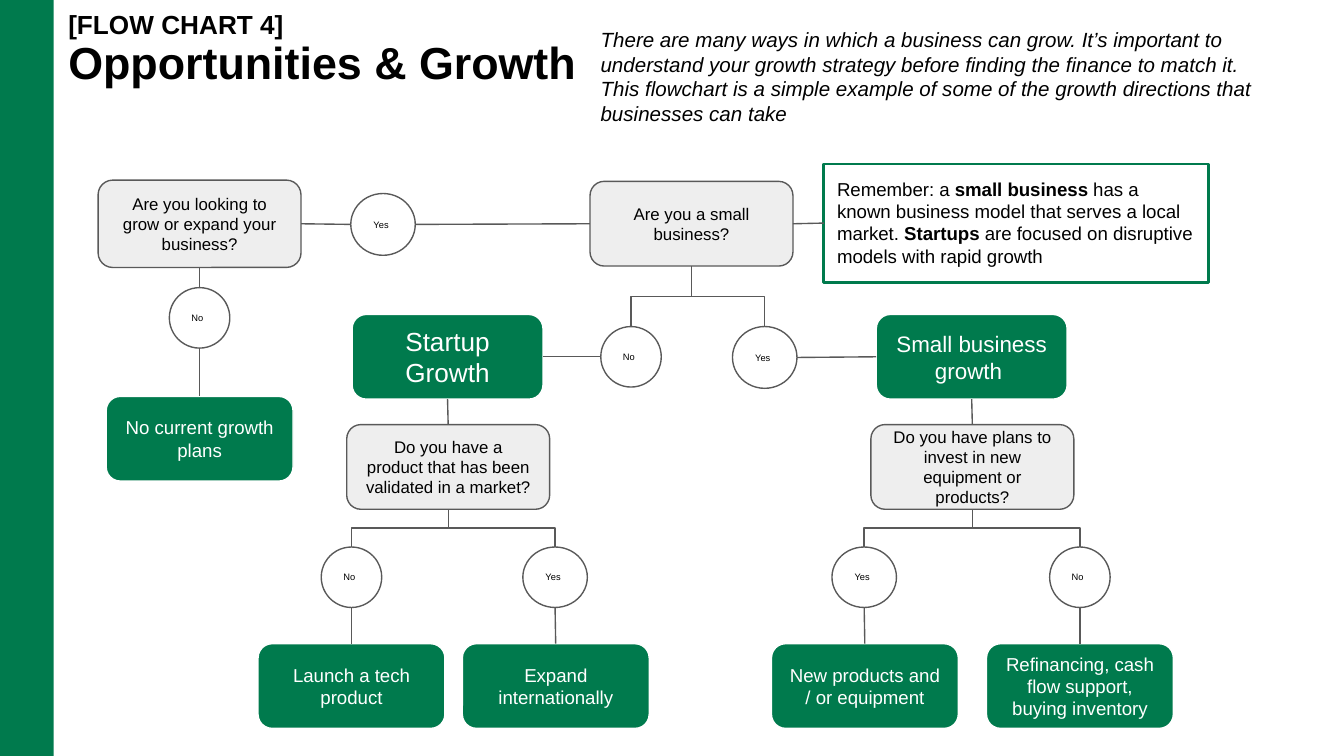
from pptx import Presentation
from pptx.dml.color import RGBColor
from pptx.enum.shapes import MSO_CONNECTOR as Connector, MSO_SHAPE as Shape
from pptx.enum.text import MSO_ANCHOR as Anchor, MSO_AUTO_SIZE as AutoSize, PP_ALIGN as Align
from pptx.oxml.xmlchemy import OxmlElement
from pptx.util import Inches, Pt

GREEN = RGBColor(0x00, 0x7A, 0x4D)
LIGHT_GREY = RGBColor(0xEE, 0xEE, 0xEE)
DARK_GREY = RGBColor(0x59, 0x59, 0x59)
WHITE = RGBColor(0xFF, 0xFF, 0xFF)
BLACK = RGBColor(0x00, 0x00, 0x00)

SLIDE_WIDTH = Inches(10)
SLIDE_HEIGHT = SLIDE_WIDTH * 9 // 16
TOP, LEFT, BOTTOM, RIGHT = range(4)
BOX_HEIGHT = 0.63
ANSWER_TOP = 4.07
OUTCOME_TOP = 4.79


def set_margins(frame):
    """Wrap the text and give it equal margins."""
    frame.word_wrap = True
    frame.margin_left = frame.margin_right = Inches(0.1)
    frame.margin_top = frame.margin_bottom = Inches(0.1)


def style_run(run, size, color=BLACK, bold=False, italic=False):
    """Apply the slide's font to a run."""
    run.font.name = "Arial"
    run.font.size = Pt(size)
    run.font.color.rgb = color
    run.font.bold = bold
    run.font.italic = italic


def add_node(slide, kind, text, box, fill, line, size, color, align=Align.CENTER):
    """Add one labelled node of the flow chart."""
    node = slide.shapes.add_shape(kind, *map(Inches, box))
    node.shadow.inherit = False
    node.fill.solid()
    node.fill.fore_color.rgb = fill
    node.line.color.rgb = line
    node.line.width = Pt(0.75)
    set_margins(node.text_frame)
    node.text_frame.vertical_anchor = Anchor.MIDDLE
    node.text_frame.text = text
    label = node.text_frame.paragraphs[0]
    label.alignment = align
    style_run(label.runs[0], size, color)
    return node


def add_question(slide, text, left, top, height=BOX_HEIGHT):
    """Add a grey question box."""
    return add_node(slide, Shape.ROUNDED_RECTANGLE, text, (left, top, 1.51, height),
                    LIGHT_GREY, DARK_GREY, 9, BLACK)


def add_outcome(slide, text, left, top, width=1.39, size=10):
    """Add a green outcome box."""
    return add_node(slide, Shape.ROUNDED_RECTANGLE, text, (left, top, width, BOX_HEIGHT),
                    GREEN, WHITE, size, WHITE)


def add_answer(slide, text, left, top, height=0.45):
    """Add a Yes or No circle."""
    width = 0.48 if text == "Yes" else 0.45
    return add_node(slide, Shape.OVAL, text, (left, top, width, height),
                    WHITE, DARK_GREY, 5, BLACK, Align.LEFT)


def side_middle(node, side):
    """Return the middle point of a node's side."""
    center, middle = node.left + node.width // 2, node.top + node.height // 2
    return {
        TOP: (center, node.top),
        LEFT: (node.left, middle),
        BOTTOM: (center, node.top + node.height),
        RIGHT: (node.left + node.width, middle),
    }[side]


def add_link(slide, kind, start, end):
    """Add a grey connector between two points."""
    link = slide.shapes.add_connector(kind, *start, *end)
    link.line.color.rgb = DARK_GREY
    link.line.width = Pt(0.75)
    link._element.spPr.append(OxmlElement("a:effectLst"))
    return link


def join(slide, source, source_side, target, target_side):
    """Join two nodes by a straight line."""
    link = add_link(slide, Connector.STRAIGHT,
                    side_middle(source, source_side), side_middle(target, target_side))
    if source.auto_shape_type != Shape.OVAL:
        link.begin_connect(source, source_side)
    if target.auto_shape_type != Shape.OVAL:
        link.end_connect(target, target_side)


def branch(slide, question, answer):
    """Join a question to an answer below it by an elbow that leaves downwards."""
    start, end = side_middle(question, BOTTOM), side_middle(answer, TOP)
    link = add_link(slide, Connector.ELBOW, start, end)
    link.begin_connect(question, BOTTOM)
    link.end_connect(answer, TOP)
    drop, shift = end[1] - start[1], abs(end[0] - start[0])
    link.left = (start[0] + end[0] - drop) // 2
    link.top = (start[1] + end[1] - shift) // 2
    link.width, link.height = drop, shift
    frame = link._element.spPr.xfrm
    rightwards = end[0] > start[0]
    frame.set("rot", str((270 if rightwards else 90) * 60000))
    frame.set("flipH", "1" if rightwards else "0")


def add_heading(slide):
    """Add the side bar, the title and the introduction."""
    bar = slide.shapes.add_shape(Shape.RECTANGLE, 0, 0, Inches(0.4), SLIDE_HEIGHT)
    bar.shadow.inherit = False
    bar.fill.solid()
    bar.fill.fore_color.rgb = GREEN
    bar.line.fill.background()

    title = slide.shapes.add_textbox(Inches(0.41), Inches(-0.01), Inches(6.98), Inches(0.79))
    set_margins(title.text_frame)
    title.text_frame.text = "[FLOW CHART 4]\nOpportunities & Growth"
    for line, size in zip(title.text_frame.paragraphs, (14, 24)):
        line.line_spacing = 0.9
        style_run(line.runs[0], size, bold=True)

    intro = slide.shapes.add_textbox(Inches(4.37), Inches(0.1), Inches(5.25), Inches(0.94))
    set_margins(intro.text_frame)
    intro.text_frame.auto_size = AutoSize.SHAPE_TO_FIT_TEXT
    intro.text_frame.text = (
        "There are many ways in which a business can grow. It’s important to understand "
        "your growth strategy before finding the finance to match it. This flowchart is a "
        "simple example of some of the growth directions that businesses can take")
    style_run(intro.text_frame.paragraphs[0].runs[0], 11, italic=True)


def add_reminder(slide):
    """Add the outlined definition of small businesses and startups."""
    reminder = slide.shapes.add_shape(Shape.RECTANGLE, Inches(6.13), Inches(1.22),
                                      Inches(2.86), Inches(0.88))
    reminder.shadow.inherit = False
    reminder.fill.background()
    reminder.line.color.rgb = GREEN
    reminder.line.width = Pt(1.5)
    set_margins(reminder.text_frame)
    reminder.text_frame.vertical_anchor = Anchor.TOP
    reminder.text_frame.auto_size = AutoSize.SHAPE_TO_FIT_TEXT
    definition = reminder.text_frame.paragraphs[0]
    definition.alignment = Align.LEFT
    for text, bold in (
        ("Remember: a ", False),
        ("small business", True),
        (" has a known business model that serves a local market. ", False),
        ("Startups ", True),
        ("are focused on disruptive models with rapid growth", False),
    ):
        run = definition.add_run()
        run.text = text
        style_run(run, 10, bold=bold)
    return reminder


def add_growth_path(slide, growth, question, choices):
    """Add a growth type's question with its answers and their outcomes."""
    join(slide, growth, BOTTOM, question, TOP)
    for reply, reply_left, result, result_left in choices:
        answer = add_answer(slide, reply, reply_left, ANSWER_TOP)
        outcome = add_outcome(slide, result, result_left, OUTCOME_TOP)
        branch(slide, question, answer)
        join(slide, answer, BOTTOM, outcome, TOP)


def main():
    """Build the slide and save it."""
    deck = Presentation()
    deck.slide_width, deck.slide_height = SLIDE_WIDTH, SLIDE_HEIGHT
    slide = deck.slides.add_slide(deck.slide_layouts[6])
    add_heading(slide)

    expand = add_question(slide, "Are you looking to grow or expand your business?", 0.73, 1.34, 0.65)
    expand_no = add_answer(slide, "No", 1.26, 2.14)
    expand_yes = add_answer(slide, "Yes", 2.61, 1.44, 0.46)
    no_plans = add_outcome(slide, "No current growth plans", 0.79, 2.95)
    small = add_question(slide, "Are you a small business?", 4.39, 1.35)
    small_no = add_answer(slide, "No", 4.47, 2.43)
    small_yes = add_answer(slide, "Yes", 5.45, 2.43, 0.46)
    startup_growth = add_outcome(slide, "Startup Growth", 2.62, 2.34, 1.42, 14)
    small_growth = add_outcome(slide, "Small business growth ", 6.52, 2.34, 1.42, 12)
    reminder = add_reminder(slide)

    join(slide, expand, BOTTOM, expand_no, TOP)
    join(slide, expand_no, BOTTOM, no_plans, TOP)
    join(slide, expand, RIGHT, expand_yes, LEFT)
    join(slide, expand_yes, RIGHT, small, LEFT)
    join(slide, small, RIGHT, reminder, LEFT)
    branch(slide, small, small_no)
    branch(slide, small, small_yes)
    join(slide, small_no, LEFT, startup_growth, RIGHT)
    join(slide, small_yes, RIGHT, small_growth, LEFT)

    validated = add_question(
        slide, "Do you have a product that has been validated in a market?", 2.58, 3.16)
    add_growth_path(slide, startup_growth, validated, (
        ("No", 2.39, "Launch a tech product", 1.92),
        ("Yes", 3.89, "Expand internationally", 3.44)))
    invest = add_question(
        slide, "Do you have plans to invest in new equipment or products?", 6.48, 3.16)
    add_growth_path(slide, small_growth, invest, (
        ("Yes", 6.19, "New products and / or equipment", 5.74),
        ("No", 7.81, "Refinancing, cash flow support, buying inventory", 7.34)))
    deck.save("out.pptx")


if __name__ == "__main__":
    main()
